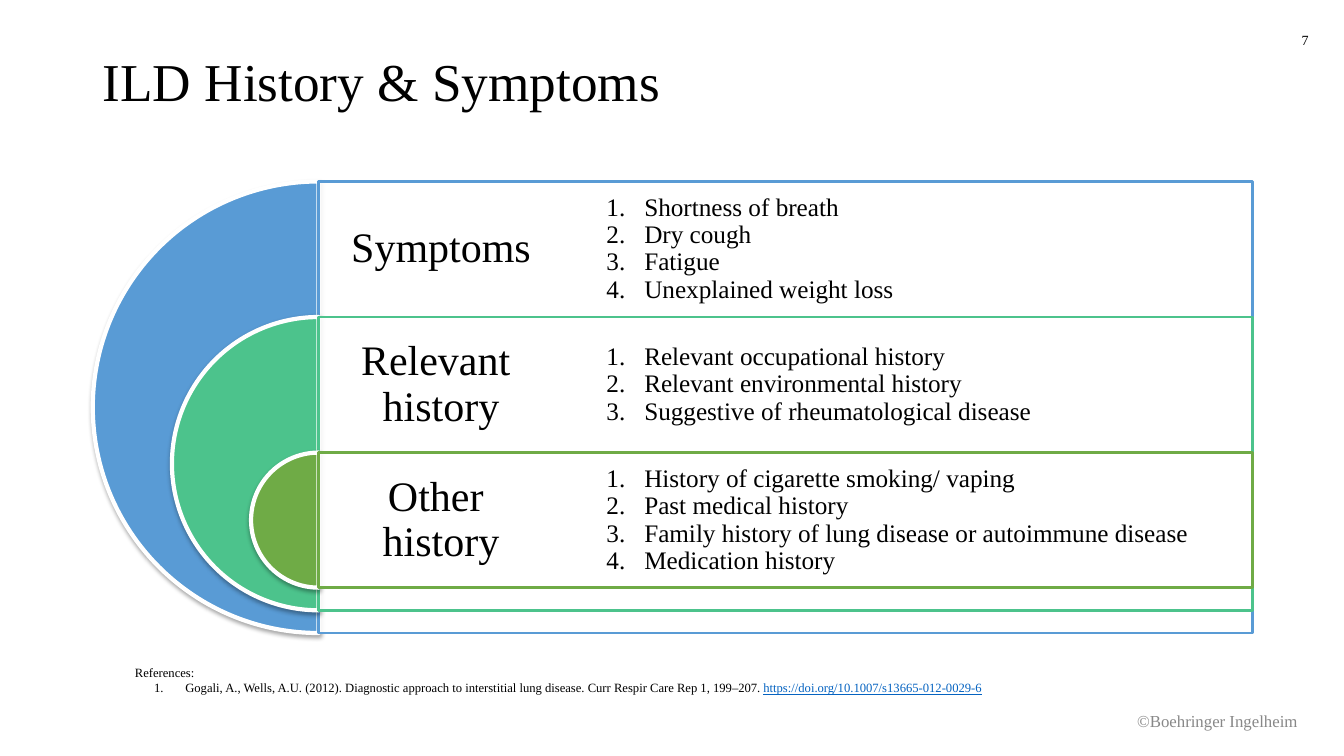
from dataclasses import dataclass

from lxml.etree import SubElement
from pptx import Presentation
from pptx.dml.color import RGBColor
from pptx.enum.shapes import MSO_SHAPE
from pptx.enum.text import MSO_ANCHOR, PP_ALIGN
from pptx.oxml.ns import qn
from pptx.util import Inches, Pt


@dataclass(frozen=True)
class Theme:
    font: str = "Times New Roman"
    ink: str = "000000"
    paper: str = "FFFFFF"
    gray: str = "888888"
    link: str = "0563C1"
    rings: tuple = ("599BD5", "4CC38C", "6FAB46")
    title: int = 38
    head: int = 30
    body: int = 18
    foot: int = 12
    page: int = 10
    note: int = 9


def write(para, text, *, font, size, color, under=None):
    """Add one formatted run to a paragraph."""
    run = para.add_run()
    run.text = text
    run.font.name = font
    run.font.size = Pt(size)
    run.font.color.rgb = RGBColor.from_string(color)
    run.font.underline = under


class Board:
    """Draws on a grid of square cells, 75 rows to the slide height."""

    def __init__(self, deck, theme):
        self.theme = theme
        self.cell = deck.slide_height / 75
        self.slide = deck.slides.add_slide(deck.slide_layouts[6])

    def place(self, box):
        return [round(n * self.cell) for n in box]

    def text(self, box, lines, size, color=None, align=PP_ALIGN.LEFT,
             anchor=MSO_ANCHOR.MIDDLE, pad=(1, 0.5), space=None, indent=None):
        frame = self.slide.shapes.add_textbox(*self.place(box)).text_frame
        frame.word_wrap = True
        frame.vertical_anchor = anchor
        side, edge = self.place(pad)
        frame.margin_left = frame.margin_right = side
        frame.margin_top = frame.margin_bottom = edge
        for i, line in enumerate(lines):
            para = frame.paragraphs[0] if i == 0 else frame.add_paragraph()
            para.alignment = align
            para.line_spacing = space
            if indent:
                self.number(para, indent)
            write(para, line, font=self.theme.font, size=size,
                  color=color or self.theme.ink)
        return frame

    def number(self, para, indent):
        """Number a paragraph; indent is the hanging part, in cells."""
        props = para._p.get_or_add_pPr()
        props.set("marL", str(round(5 * self.cell)))
        props.set("indent", str(round(-indent * self.cell)))
        SubElement(props, qn("a:buFont"), typeface=self.theme.font)
        SubElement(props, qn("a:buAutoNum"), type="arabicPeriod")

    def shape(self, kind, box, fill, line, width):
        form = self.slide.shapes.add_shape(kind, *self.place(box))
        form.shadow.inherit = False
        form.fill.solid()
        form.fill.fore_color.rgb = RGBColor.from_string(fill)
        form.line.color.rgb = RGBColor.from_string(line)
        form.line.width = Pt(width)
        return form

    def half(self, box, fill):
        """Left half of a disc, with a soft shadow below."""
        form = self.shape(MSO_SHAPE.PIE, box, fill, self.theme.paper, 3)
        form.adjustments[0], form.adjustments[1] = 54, 162
        glow = SubElement(form.element.spPr.find(qn("a:effectLst")),
                          qn("a:outerShdw"), blurRad="40000", dist="20000",
                          dir="5400000", rotWithShape="0")
        tint = SubElement(glow, qn("a:srgbClr"), val=self.theme.ink)
        SubElement(tint, qn("a:alpha"), val="35000")

    def panel(self, box, color):
        """White, slightly clear panel with a coloured edge."""
        form = self.shape(MSO_SHAPE.RECTANGLE, box, self.theme.paper, color, 2)
        tint = form.element.spPr.find(qn("a:solidFill")).find(qn("a:srgbClr"))
        SubElement(tint, qn("a:alpha"), val="87000")


LEVELS = [
    (["Symptoms"],
     ["Shortness of breath", "Dry cough", "Fatigue",
      "Unexplained weight loss"]),
    (["Relevant ", "history"],
     ["Relevant occupational history", "Relevant environmental history",
      "Suggestive of rheumatological disease"]),
    (["Other ", "history"],
     ["History of cigarette smoking/ vaping", "Past medical history",
      "Family history of lung disease or autoimmune disease",
      "Medication history"]),
]


def main():
    deck = Presentation()
    deck.slide_width, deck.slide_height = Inches(13.33), Inches(7.5)
    theme = Theme()
    board = Board(deck, theme)

    # Page number, footer and title
    board.text((126.9, 1.5, 5.1, 5), ["7"], theme.page, align=PP_ALIGN.CENTER)
    board.text((84.7, 69.5, 45, 4), ["©Boehringer Ingelheim"], theme.foot,
               color=theme.gray, align=PP_ALIGN.RIGHT)
    board.text((9.2, 4, 115, 8.7), ["ILD History & Symptoms"], theme.title,
               space=0.9)

    # Nested half discs, each with its panel, heading and list
    axis, top, row = 31.6, 18, 13.45
    for i, ((head, items), color) in enumerate(zip(LEVELS, theme.rings)):
        y = top + i * row
        size = 44.8 - i * 15.7
        board.half((axis - size / 2, y, size, size), color)
        board.panel((axis, y, 92.6, size), color)
        board.text((axis, y, 24.3, row), head, theme.head, space=0.9,
                   align=PP_ALIGN.CENTER, pad=(1.5, 1.5))
        board.text((58.3, y, 65.8, row), items, theme.body, space=0.9,
                   pad=(0.6, 0.6), indent=3.75)

    # References
    notes = board.text((12.4, 65.5, 106.4, 4), ["References:"], theme.note,
                       anchor=MSO_ANCHOR.TOP)
    entry = notes.add_paragraph()
    board.number(entry, 3.1)
    write(entry, "Gogali, A., Wells, A.U. (2012). Diagnostic approach to "
          "interstitial lung disease. Curr Respir Care Rep 1, 199–207. ",
          font=theme.font, size=theme.note, color=theme.ink)
    write(entry, "https://doi.org/10.1007/s13665-012-0029-6",
          font=theme.font, size=theme.note, color=theme.link, under=True)

    deck.save("out.pptx")


if __name__ == "__main__":
    main()
